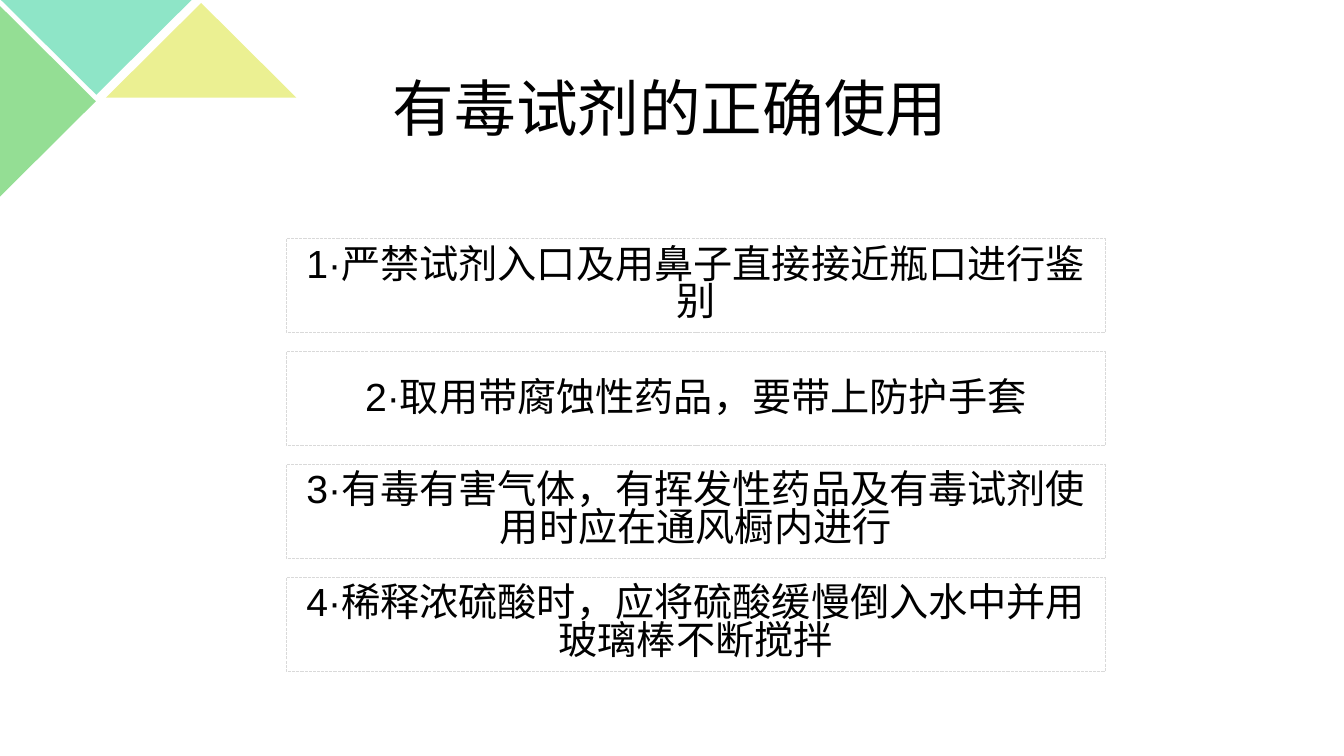
import pptx
import pptx.util
import pptx.dml.color
import pptx.enum.dml
import pptx.enum.shapes
import pptx.enum.text
from pptx.util import Inches

THEME = {
    "green": "94DE94", "mint": "8EE5C7", "yellow": "EBF092",
    "text": "000000", "border": "D9D9D9",
    "font": "Arial", "title_size": 44, "rule_size": 28, "border_width": 0.75,
}

# left, top, width, height, rotation, colour name
CORNER_TRIANGLES = [
    (-0.47, 0.53, 1.89, 0.95, 90, "green"),
    (0.01, 0, 1.89, 0.94, 180, "mint"),
    (1.05, 0.03, 1.89, 0.94, 0, "yellow"),
]

# text, line spacing
RULES = [
    ("1·严禁试剂入口及用鼻子直接接近瓶口进行鉴别", 0.8),
    ("2·取用带腐蚀性药品，要带上防护手套", 0.9),
    ("3·有毒有害气体，有挥发性药品及有毒试剂使用时应在通风橱内进行", 0.8),
    ("4·稀释浓硫酸时，应将硫酸缓慢倒入水中并用玻璃棒不断搅拌", 0.8),
]
RULE_TOP, RULE_STEP = 2.37, 1.12


def rgb(name):
    return pptx.dml.color.RGBColor.from_string(THEME[name])


def set_attrs(obj, values):
    for name, value in values.items():
        setattr(obj, name, value)


def write_text(sp, text, size, **paragraph_format):
    tf = sp.text_frame
    set_attrs(tf, {"word_wrap": True,
                   "vertical_anchor": pptx.enum.text.MSO_ANCHOR.MIDDLE})
    p = tf.paragraphs[0]
    set_attrs(p, {"alignment": pptx.enum.text.PP_ALIGN.CENTER, **paragraph_format})
    r = p.add_run()
    r.text = text
    set_attrs(r.font, {"name": THEME["font"], "size": pptx.util.Pt(THEME[size])})
    r.font.color.rgb = rgb("text")


def add_triangle(s, left, top, width, height, rotation, color):
    sp = s.shapes.add_shape(pptx.enum.shapes.MSO_SHAPE.ISOSCELES_TRIANGLE,
                            Inches(left), Inches(top), Inches(width), Inches(height))
    sp.rotation = rotation
    sp.shadow.inherit = False
    sp.fill.solid()
    sp.fill.fore_color.rgb = rgb(color)
    sp.line.fill.background()


def add_title(s, text):
    sp = s.shapes.add_textbox(Inches(0.9), Inches(0.38), Inches(11.5), Inches(1.45))
    write_text(sp, text, "title_size", line_spacing=0.9)


def add_rule(s, left, top, text, spacing):
    sp = s.shapes.add_shape(pptx.enum.shapes.MSO_SHAPE.RECTANGLE,
                            Inches(left), Inches(top), Inches(8.12), Inches(0.93))
    sp.shadow.inherit = False
    sp.fill.background()
    sp.line.color.rgb = rgb("border")
    set_attrs(sp.line, {"width": pptx.util.Pt(THEME["border_width"]),
                        "dash_style": pptx.enum.dml.MSO_LINE.SQUARE_DOT})
    write_text(sp, text, "rule_size", line_spacing=spacing,
               space_before=pptx.util.Pt(10))


def main():
    prs = pptx.Presentation()
    set_attrs(prs, {"slide_width": Inches(13.33), "slide_height": Inches(7.5)})
    s = prs.slides.add_slide(prs.slide_layouts[6])

    # Corner decoration
    for triangle in CORNER_TRIANGLES:
        add_triangle(s, *triangle)

    # Title
    add_title(s, "有毒试剂的正确使用")

    # Safety rules, evenly stacked
    for i, (text, spacing) in enumerate(RULES):
        add_rule(s, 2.84, RULE_TOP + i * RULE_STEP, text, spacing)

    prs.save("out.pptx")


if __name__ == "__main__":
    main()
